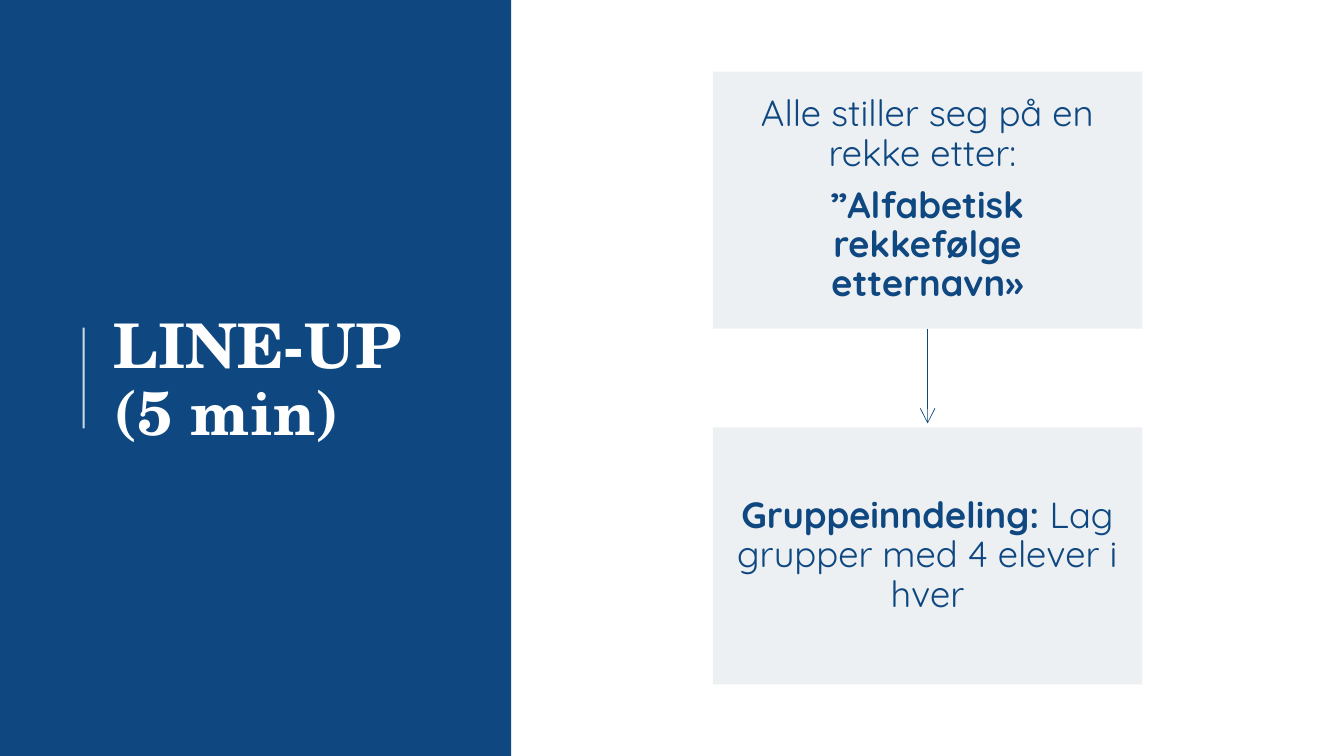
import pptx
import pptx.dml.color
import pptx.enum.shapes
import pptx.enum.text
import pptx.oxml
import pptx.oxml.ns
import pptx.util
from pptx.util import Inches

COLORS = {"navy": "0F4881", "mist": "EDF0F3", "white": "FFFFFF"}
TITLE_FORMAT = {"name": "TeX Gyre Schola", "size": pptx.util.Pt(44), "bold": True}
STEP_FORMAT = {"name": "Quicksand", "size": pptx.util.Pt(26)}


def rgb(color):
    return pptx.dml.color.RGBColor.from_string(COLORS[color])


def set_all(target, values):
    for attribute, value in values.items():
        setattr(target, attribute, value)


def add_xml(parent, tag, **attributes):
    element = pptx.oxml.parse_xml(f"<a:{tag} {pptx.oxml.ns.nsdecls('a')}/>")
    for key, value in attributes.items():
        element.set(key, value)
    parent.append(element)


class SlideBuilder:
    def __init__(self, deck):
        self.slide = deck.slides.add_slide(deck.slide_layouts[5])

    def block(self, left, top, width, height, color):
        rectangle = self.slide.shapes.add_shape(
            pptx.enum.shapes.MSO_SHAPE.RECTANGLE,
            Inches(left), Inches(top), Inches(width), Inches(height))
        rectangle.shadow.inherit = False
        rectangle.fill.solid()
        rectangle.fill.fore_color.rgb = rgb(color)
        rectangle.line.fill.background()
        return rectangle

    def title(self, text, left, top, width, height):
        heading = self.slide.shapes.title
        set_all(heading, {"left": Inches(left), "top": Inches(top),
                          "width": Inches(width), "height": Inches(height)})
        set_all(heading.text_frame, {
            "text": text, "word_wrap": True,
            "auto_size": pptx.enum.text.MSO_AUTO_SIZE.NONE,
            "vertical_anchor": pptx.enum.text.MSO_ANCHOR.MIDDLE})
        paragraph = heading.text_frame.paragraphs[0]
        set_all(paragraph, {"alignment": pptx.enum.text.PP_ALIGN.LEFT, "line_spacing": 0.9})
        set_all(paragraph.font, TITLE_FORMAT)
        paragraph.font.color.rgb = rgb("white")
        # The title has to lie in front of the side panel.
        heading.element.getparent().append(heading.element)

    def step(self, left, top, width, height, paragraphs):
        """Add a box whose paragraphs are lists of (text, bold) runs."""
        box = self.block(left, top, width, height, "mist")
        frame = box.text_frame
        set_all(frame, {
            "word_wrap": True, "vertical_anchor": pptx.enum.text.MSO_ANCHOR.MIDDLE,
            "margin_left": Inches(0.21), "margin_right": Inches(0.21),
            "margin_top": Inches(0.22), "margin_bottom": Inches(0.22)})
        for index, runs in enumerate(paragraphs):
            paragraph = frame.add_paragraph() if index else frame.paragraphs[0]
            set_all(paragraph, {"alignment": pptx.enum.text.PP_ALIGN.CENTER,
                                "line_spacing": 0.9, "space_after": pptx.util.Pt(9)})
            for text, bold in runs:
                run = paragraph.add_run()
                run.text = text
                set_all(run.font, {**STEP_FORMAT, "bold": bold})
                run.font.color.rgb = rgb("navy")
        return box

    def line(self, x, start, end, color, width):
        connector = self.slide.shapes.add_connector(
            pptx.enum.shapes.MSO_CONNECTOR.STRAIGHT,
            Inches(x), Inches(start), Inches(x), Inches(end))
        connector.line.color.rgb = rgb(color)
        connector.line.width = pptx.util.Pt(width)
        add_xml(connector.element.spPr, "effectLst")
        return connector


def main():
    deck = pptx.Presentation()
    deck.slide_width, deck.slide_height = Inches(13.33), Inches(7.5)
    builder = SlideBuilder(deck)

    builder.block(0, 0, 5.07, 7.5, "navy")
    accent = builder.line(0.83, 4.25, 3.25, "white", 1.5)
    accent_color = accent.element.spPr.find(".//" + pptx.oxml.ns.qn("a:srgbClr"))
    add_xml(accent_color, "alpha", val="80000")
    builder.title("LINE-UP\v(5 min)", 1.03, 0.78, 3.69, 6.02)

    left, top, width, height, pitch = 7.07, 0.71, 4.26, 2.55, 3.53
    line_up = builder.step(left, top, width, height, [
        [("Alle stiller seg på en rekke etter: ", False)],
        [("”Alfabetisk rekkefølge etternavn»", True)]])
    builder.step(left, top + pitch, width, height, [
        [("Gruppeinndeling:", True), (" Lag grupper med 4 elever i hver", False)]])

    arrow = builder.line(left + width / 2, top + height, 4.2, "navy", 0.5)
    arrow.begin_connect(line_up, 2)
    add_xml(arrow.line._get_or_add_ln(), "tailEnd", type="arrow", w="lg", len="lg")

    deck.save("out.pptx")


if __name__ == "__main__":
    main()
